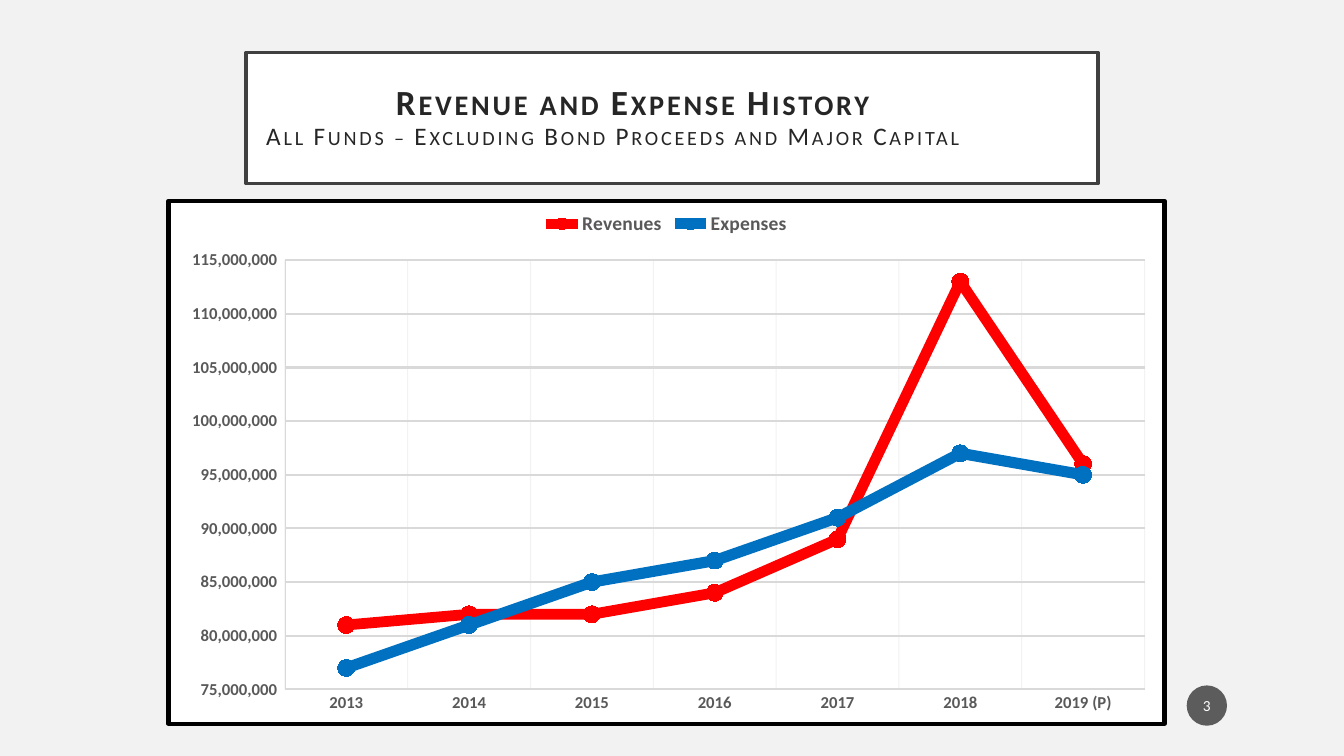
from lxml import etree
from pptx import Presentation
from pptx.chart.data import CategoryChartData
from pptx.dml.color import RGBColor
from pptx.enum.chart import XL_CHART_TYPE, XL_LEGEND_POSITION, XL_MARKER_STYLE, XL_TICK_MARK
from pptx.enum.shapes import MSO_SHAPE
from pptx.enum.text import MSO_ANCHOR, MSO_AUTO_SIZE, PP_ALIGN
from pptx.oxml import parse_xml
from pptx.oxml.ns import nsdecls, qn
from pptx.util import Inches, Pt

LINE = XL_CHART_TYPE.LINE_MARKERS
TOP = XL_LEGEND_POSITION.TOP
CIRCLE = XL_MARKER_STYLE.CIRCLE
NO_TICK = XL_TICK_MARK.NONE
OVAL = MSO_SHAPE.OVAL
MIDDLE = MSO_ANCHOR.MIDDLE
FIXED = MSO_AUTO_SIZE.NONE
CENTER = PP_ALIGN.CENTER

FONT = "Calibri"
HEX = {
    "back": "F2F2F2", "white": "FFFFFF", "black": "000000",
    "frame": "404040", "title": "262626", "badge": "1D1D1D",
    "label": "595959", "grid": "D9D9D9", "red": "FF0000", "blue": "0070C0",
}
YEARS = ["2013", "2014", "2015", "2016", "2017", "2018", "2019 (P)"]
MILLION = 1_000_000
SERIES = [
    ("Revenues", "red", 7.75, [81, 82, 82, 84, 89, 113, 96]),
    ("Expenses", "blue", 8, [77, 81, 85, 87, 91, 97, 95]),
]
FORMAT = '_(* #,##0_);_(* \\(#,##0\\);_(* "-"??_);_(@_)'


def rgb(name):
    return RGBColor.from_string(HEX[name])


def paint(fill, name, alpha=None):
    fill.solid()
    fill.fore_color.rgb = rgb(name)
    if alpha is not None:
        node = fill._xPr.find(f".//{qn('a:srgbClr')}")
        etree.SubElement(node, qn("a:alpha")).set("val", str(alpha * 1000))


def stroke(line, name, width, alpha=None):
    paint(line.fill, name, alpha)
    line.width = Pt(width)


def style(font, size, color, bold=False):
    font.name = FONT
    font.size = Pt(size)
    font.bold = bold
    font.color.rgb = rgb(color)


def write(para, text, size, color, bold=False, caps=False):
    run = para.add_run()
    run.text = text
    style(run.font, size, color, bold)
    if caps:
        props = run.font._element
        props.set("cap", "small")
        props.set("spc", "200")


def place(shape, left, top, width, height):
    shape.left, shape.top = Inches(left), Inches(top)
    shape.width, shape.height = Inches(width), Inches(height)


def set_frame(frame, side, edge):
    frame.auto_size = FIXED
    frame.word_wrap = True
    frame.vertical_anchor = MIDDLE
    frame.margin_left = frame.margin_right = Inches(side)
    frame.margin_top = frame.margin_bottom = Inches(edge)
    para = frame.paragraphs[0]
    para.alignment = CENTER
    return para


def add_title(slide):
    title = slide.shapes.title
    place(title, 2.44, 0.52, 8.45, 1.3)
    paint(title.fill, "white")
    stroke(title.line, "frame", 2.5)
    para = set_frame(title.text_frame, 0.2, 0.2)
    para.line_spacing = 0.9
    para.space_before = Pt(0)
    write(para, "Revenue and Expense History", 25.2, "title", bold=True, caps=True)
    para.add_line_break()
    write(para, "All Funds – Excluding Bond Proceeds and Major Capital", 18, "title", caps=True)


def set_axis(axis, width, alpha=None):
    axis.major_tick_mark = axis.minor_tick_mark = NO_TICK
    axis.has_major_gridlines = True
    stroke(axis.major_gridlines.format.line, "grid", width, alpha)
    stroke(axis.format.line, "grid", 0.25)
    style(axis.tick_labels.font, 12, "label", bold=True)


def set_border(chart, fill, line, width):
    border = parse_xml(
        f'<c:spPr {nsdecls("c", "a")}>'
        f'<a:solidFill><a:srgbClr val="{HEX[fill]}"/></a:solidFill>'
        f'<a:ln w="{Pt(width)}"><a:solidFill><a:srgbClr val="{HEX[line]}"/>'
        '</a:solidFill></a:ln></c:spPr>'
    )
    chart._chartSpace.find(qn("c:txPr")).addprevious(border)


def add_graph(slide):
    data = CategoryChartData(number_format=FORMAT)
    data.categories = YEARS
    for name, _, _, vals in SERIES:
        data.add_series(name, [val * MILLION for val in vals])
    spot = [Inches(n) for n in (1.65, 1.97, 9.92, 5.23)]
    chart = slide.shapes.add_chart(LINE, *spot, data).chart
    style(chart.font, 10, "black", bold=True)
    set_border(chart, "white", "black", 3)
    chart.has_title = False
    chart.has_legend = True
    chart.legend.position = TOP
    chart.legend.include_in_layout = False
    style(chart.legend.font, 14, "label", bold=True)
    set_axis(chart.category_axis, 0.75, 32)
    scale = chart.value_axis
    set_axis(scale, 1.5)
    scale.minimum_scale = 75 * MILLION
    scale.maximum_scale = 115 * MILLION
    scale.major_unit = 5 * MILLION
    scale.tick_labels.number_format = FORMAT
    scale.tick_labels.number_format_is_linked = False
    plot = chart.plots[0]
    plot.vary_by_categories = False
    for item, (_, color, width, _) in zip(plot.series, SERIES):
        item.smooth = False
        stroke(item.format.line, color, width)
        item.marker.style = CIRCLE
        item.marker.size = 12
        paint(item.marker.format.fill, color)
        stroke(item.marker.format.line, color, 0.75)


def add_badge(slide, text):
    spot = [Inches(n) for n in (11.77, 6.8, 0.4, 0.4)]
    badge = slide.shapes.add_shape(OVAL, *spot)
    badge.shadow.inherit = False
    paint(badge.fill, "badge", 70)
    badge.line.fill.background()
    write(set_frame(badge.text_frame, 0.02, 0.05), text, 11, "white")


def main():
    deck = Presentation()
    deck.slide_width, deck.slide_height = Inches(13.33), Inches(7.5)
    slide = deck.slides.add_slide(deck.slide_layouts[5])
    paint(slide.background.fill, "back")
    add_title(slide)
    add_graph(slide)
    add_badge(slide, "3")
    deck.save("out.pptx")


if __name__ == "__main__":
    main()
